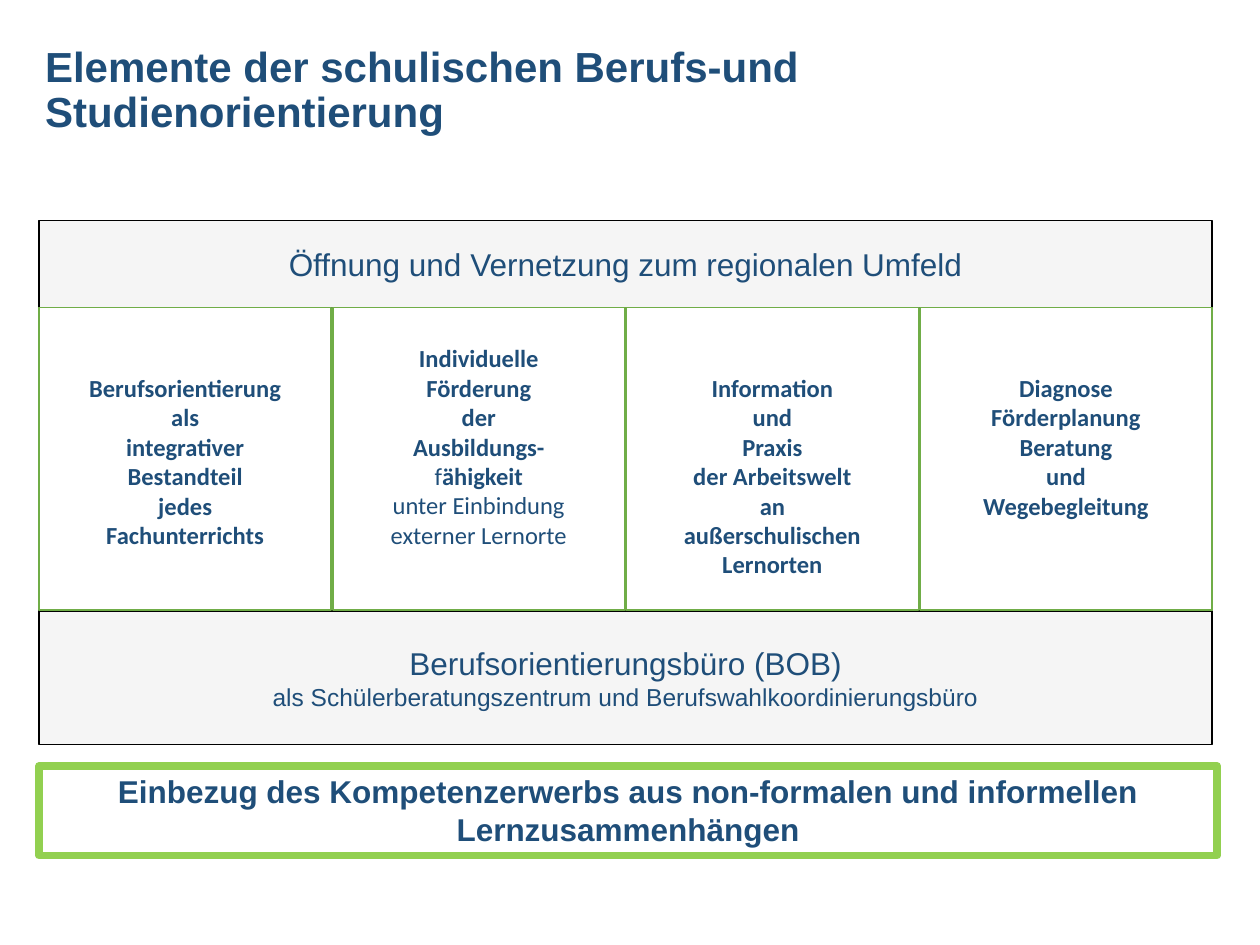
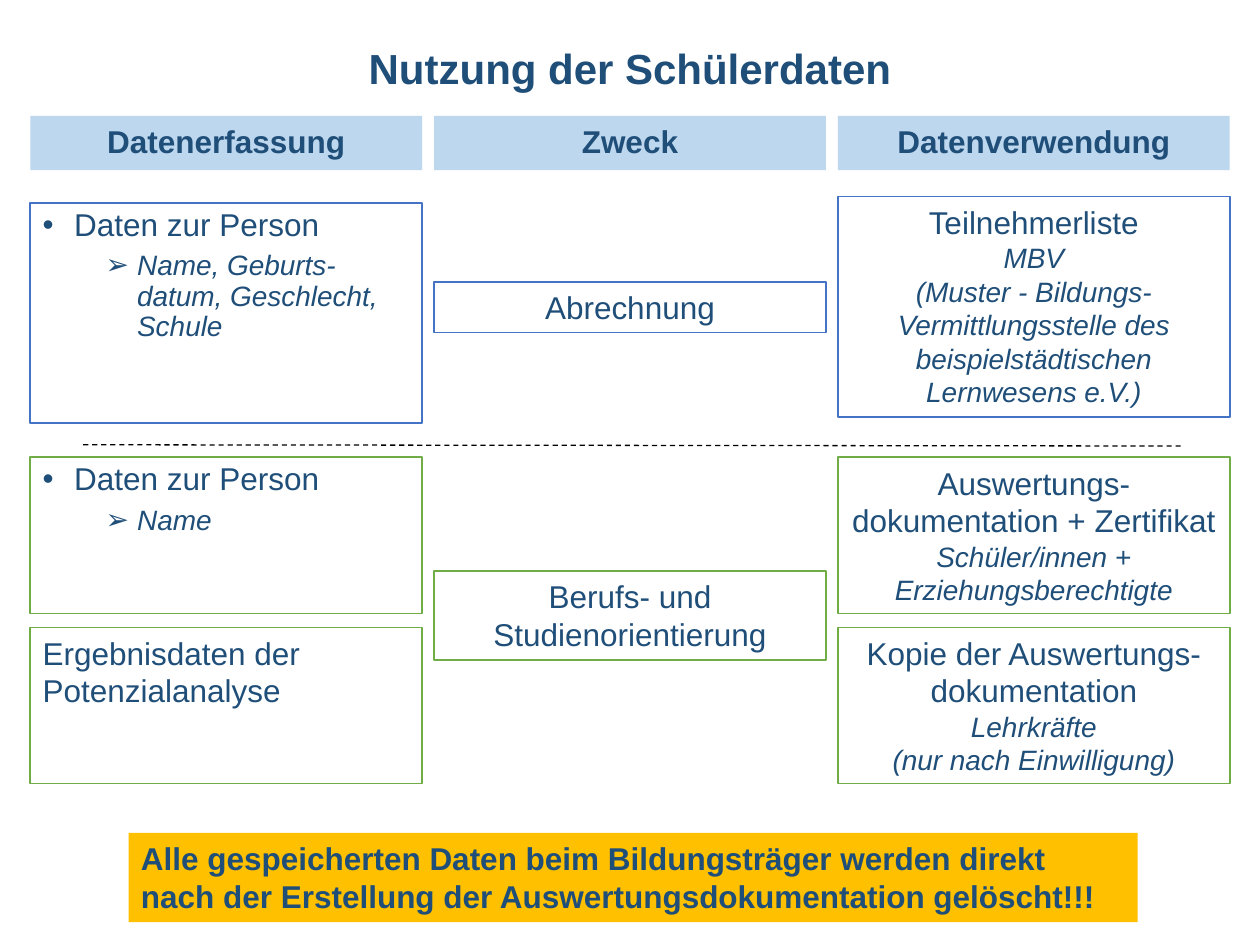
from dataclasses import dataclass
from typing import Optional

import pptx
import pptx.dml.color
import pptx.enum.dml
import pptx.enum.shapes
import pptx.enum.text
import pptx.oxml
import pptx.oxml.ns
import pptx.util

RGB = pptx.dml.color.RGBColor
Inches = pptx.util.Inches
Pt = pptx.util.Pt
ALIGN = pptx.enum.text.PP_ALIGN
ANCHOR = pptx.enum.text.MSO_ANCHOR

NAVY = RGB(0x1F, 0x4E, 0x79)
WHITE = RGB(0xFF, 0xFF, 0xFF)
BLACK = RGB(0x00, 0x00, 0x00)
GREY = RGB(0xF5, 0xF5, 0xF5)
GREEN = RGB(0x70, 0xAD, 0x47)
LIME = RGB(0x92, 0xD0, 0x50)
BLUE = RGB(0x44, 0x72, 0xC4)
PALE_BLUE = RGB(0xBD, 0xD7, 0xEE)
AMBER = RGB(0xFF, 0xC0, 0x00)

SLIDE_W, SLIDE_H = 10, 7.5
TITLE_SIZE, HEAD_SIZE, DETAIL_SIZE, PILLAR_SIZE = 24, 18, 16, 14
PILLAR_LINE = 0.235


@dataclass(frozen=True)
class Grid:
    left: float
    width: float
    gap: float

    def x(self, col: int) -> float:
        return self.left + col * (self.width + self.gap)

    def span(self, cols: int) -> float:
        return cols * self.width + (cols - 1) * self.gap


@dataclass(frozen=True)
class Stack:
    top: float
    height: float
    gap: float

    def y(self, row: int) -> float:
        return self.top + row * (self.height + self.gap)


@dataclass(frozen=True)
class Run:
    text: str
    size: float = HEAD_SIZE
    bold: bool = False
    italic: bool = False
    font: str = "Arial"


@dataclass(frozen=True)
class Para:
    runs: tuple[Run, ...]
    align: ALIGN = ALIGN.CENTER
    spacing: Optional[float] = None
    before: float = 0
    bullet: str = ""
    indent: float = 0


@dataclass(frozen=True)
class Box:
    left: float
    top: float
    width: float
    height: float
    paras: tuple[Para, ...]
    fill: Optional[RGB] = WHITE
    line: Optional[RGB] = None
    line_pt: float = 1
    anchor: ANCHOR = ANCHOR.TOP
    inset_top: float = 0.05


PILLARS = Grid(0.31, 2.32, 0.01)
COLUMNS = Grid(0.24, 3.11, 0.095)
ROWS = Stack(3.63, 1.24, 0.11)


def para(text: str, **style) -> Para:
    return Para((Run(text, **style),))


def heads(*texts: str) -> tuple[Para, ...]:
    return tuple(para(t) for t in texts)


def details(*texts: str) -> tuple[Para, ...]:
    return tuple(para(t, size=DETAIL_SIZE, italic=True) for t in texts)


def bold_lines(*texts: str) -> tuple[Para, ...]:
    return tuple(para(t, size=PILLAR_SIZE, bold=True, font="Calibri") for t in texts)


def heading(text: str, size: float = HEAD_SIZE, align: ALIGN = ALIGN.CENTER) -> tuple[Para, ...]:
    return (Para((Run(text, size, bold=True),), align, 0.9),)


def person_data(fields: str) -> tuple[Para, ...]:
    return (
        Para((Run("Daten zur Person"),), ALIGN.LEFT, 0.9, bullet="•", indent=0.25),
        Para((Run(fields, DETAIL_SIZE, italic=True),), ALIGN.LEFT, 0.9, 5, "➢", 0.75),
    )


def add_bullet(p, char: str, indent: float) -> None:
    ppr = p._p.get_or_add_pPr()
    ppr.set("marL", str(Inches(indent)))
    ppr.set("indent", str(-Inches(0.25)))
    ns = pptx.oxml.ns.nsdecls("a")
    ppr.append(pptx.oxml.parse_xml(f'<a:buFont {ns} typeface="Arial"/>'))
    ppr.append(pptx.oxml.parse_xml(f'<a:buChar {ns} char="{char}"/>'))


def write(tf, box: Box) -> None:
    tf.word_wrap = True
    tf.vertical_anchor = box.anchor
    tf.margin_top = Inches(box.inset_top)
    for i, item in enumerate(box.paras):
        p = tf.paragraphs[0] if i == 0 else tf.add_paragraph()
        p.alignment = item.align
        p.space_before = Pt(item.before)
        if item.spacing:
            p.line_spacing = item.spacing
        if item.bullet:
            add_bullet(p, item.bullet, item.indent)
        for run in item.runs:
            r = p.add_run()
            r.text = run.text
            r.font.name = run.font
            r.font.size = Pt(run.size)
            r.font.bold = run.bold
            r.font.italic = run.italic
            r.font.color.rgb = NAVY


def add_box(slide, box: Box) -> None:
    sp = slide.shapes.add_shape(
        pptx.enum.shapes.MSO_SHAPE.RECTANGLE,
        *(Inches(v) for v in (box.left, box.top, box.width, box.height)))
    sp.shadow.inherit = False
    if box.fill is None:
        sp.fill.background()
    else:
        sp.fill.solid()
        sp.fill.fore_color.rgb = box.fill
    if box.line is None:
        sp.line.fill.background()
    else:
        sp.line.color.rgb = box.line
        sp.line.width = Pt(box.line_pt)
    write(sp.text_frame, box)


def add_title(slide, text: str, left: float, top: float, width: float,
              height: float, align: ALIGN) -> None:
    tb = slide.shapes.add_textbox(*(Inches(v) for v in (left, top, width, height)))
    write(tb.text_frame, Box(left, top, width, height, heading(text, TITLE_SIZE, align),
                             anchor=ANCHOR.MIDDLE))


def add_divider(slide, x1: float, y1: float, x2: float, y2: float) -> None:
    cx = slide.shapes.add_connector(
        pptx.enum.shapes.MSO_CONNECTOR.STRAIGHT, *(Inches(v) for v in (x1, y1, x2, y2)))
    cx.line.color.rgb = BLACK
    cx.line.width = Pt(0.75)
    cx.line.dash_style = pptx.enum.dml.MSO_LINE.DASH
    cx._element.spPr.append(
        pptx.oxml.parse_xml(f'<a:effectLst {pptx.oxml.ns.nsdecls("a")}/>'))


def build_elements(slide) -> None:
    add_title(slide, "Elemente der schulischen Berufs-und Studienorientierung",
              0.26, 0.21, 9.3, 1.03, ALIGN.LEFT)

    bands = (
        (1.75, 0.69, heads("Öffnung und Vernetzung zum regionalen Umfeld")),
        (4.85, 1.06, heads("Berufsorientierungsbüro (BOB)") + (
            para("als Schülerberatungszentrum und Berufswahlkoordinierungsbüro",
                 size=PILLAR_SIZE),)),
    )
    for top, height, paras in bands:
        add_box(slide, Box(PILLARS.left, top, PILLARS.span(4), height, paras, GREY,
                           BLACK, 0.75, ANCHOR.MIDDLE))

    plain = dict(size=PILLAR_SIZE, font="Calibri")
    ability = Para((Run("f", **plain), Run("ähigkeit", bold=True, **plain)))
    pillars = (
        (2, bold_lines("Berufsorientierung", "als", "integrativer", "Bestandteil",
                       "jedes", "Fachunterrichts")),
        (1, bold_lines("Individuelle", "Förderung", "der", "Ausbildungs-") + (
            ability, para("unter Einbindung", **plain),
            para("externer Lernorte", **plain))),
        (2, bold_lines("Information", "und", "Praxis", "der Arbeitswelt", "an",
                       "außerschulischen", "Lernorten")),
        (2, bold_lines("Diagnose", "Förderplanung", "Beratung", "und",
                       "Wegebegleitung")),
    )
    for col, (skipped_lines, paras) in enumerate(pillars):
        add_box(slide, Box(PILLARS.x(col), 2.44, PILLARS.width, 2.4, paras, line=GREEN,
                           inset_top=0.05 + skipped_lines * PILLAR_LINE))

    competences = para("Einbezug des Kompetenzerwerbs aus non-formalen und informellen "
                       "Lernzusammenhängen", bold=True)
    add_box(slide, Box(PILLARS.left, 6.08, 9.35, 0.71, (competences,), None, LIME, 4.5))


def build_data_use(slide) -> None:
    add_title(slide, "Nutzung der Schülerdaten", 0, 0.29, SLIDE_W, 0.54, ALIGN.CENTER)

    for col, text in enumerate(("Datenerfassung", "Zweck", "Datenverwendung")):
        add_box(slide, Box(COLUMNS.x(col), 0.92, COLUMNS.width, 0.43, heading(text),
                           PALE_BLUE, anchor=ANCHOR.MIDDLE))

    results = tuple(Para((Run(t),), ALIGN.LEFT)
                    for t in ("Ergebnisdaten der", "Potenzialanalyse"))
    cells = (
        (0, 1.61, 1.75, BLUE, person_data("Name, Geburts-datum, Geschlecht, Schule")),
        (1, 2.24, 0.4, BLUE, heads("Abrechnung")),
        (2, 1.56, 1.75, BLUE, heads("Teilnehmerliste") + details(
            "MBV", "(Muster - Bildungs-", "Vermittlungsstelle des beispielstädtischen",
            "Lernwesens e.V.)")),
        (0, ROWS.y(0), ROWS.height, GREEN, person_data("Name")),
        (0, ROWS.y(1), ROWS.height, GREEN, results),
        (1, 4.53, 0.71, GREEN, heads("Berufs- und Studienorientierung")),
        (2, ROWS.y(0), ROWS.height, GREEN,
         heads("Auswertungs-dokumentation + Zertifikat")
         + details("Schüler/innen +", "Erziehungsberechtigte")),
        (2, ROWS.y(1), ROWS.height, GREEN,
         heads("Kopie der Auswertungs-dokumentation")
         + details("Lehrkräfte", "(nur nach Einwilligung)")),
    )
    for col, top, height, color, paras in cells:
        add_box(slide, Box(COLUMNS.x(col), top, COLUMNS.width, height, paras, line=color))

    add_divider(slide, 0.66, 3.53, 9.39, 3.54)

    deletion = Run("Alle gespeicherten Daten beim Bildungsträger werden direkt nach der "
                   "Erstellung der Auswertungsdokumentation gelöscht!!!", bold=True)
    add_box(slide, Box(1.02, 6.61, 8.01, 0.71, (Para((deletion,), ALIGN.LEFT),), AMBER))


def main() -> None:
    prs = pptx.Presentation()
    prs.slide_width, prs.slide_height = Inches(SLIDE_W), Inches(SLIDE_H)
    blank = prs.slide_layouts[6]
    for build in (build_elements, build_data_use):
        build(prs.slides.add_slide(blank))
    prs.save("out.pptx")


if __name__ == "__main__":
    main()
